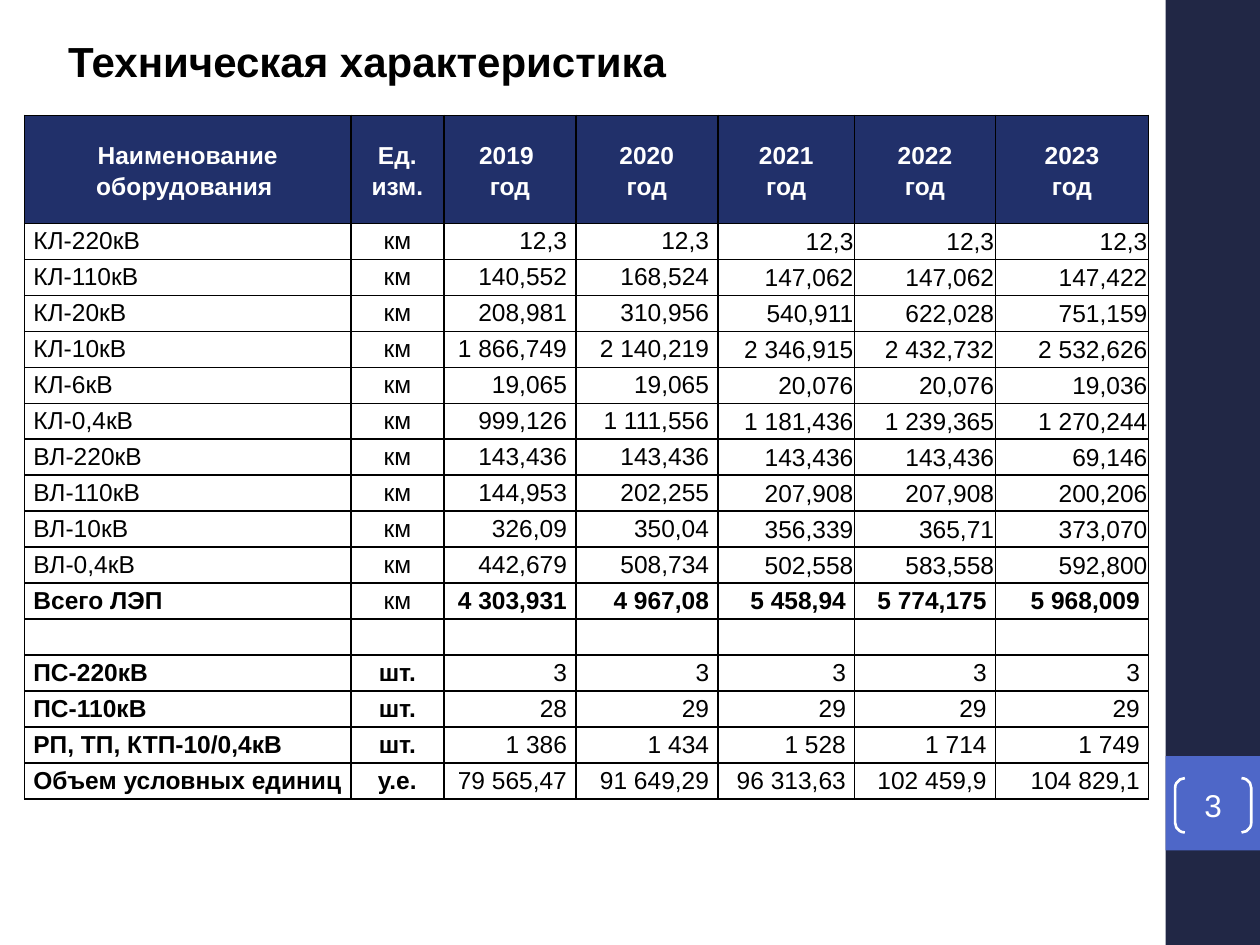
"""Build the slide with the table of technical characteristics."""
import lxml.etree
import pptx
import pptx.dml.color
import pptx.enum.shapes
import pptx.enum.text
import pptx.oxml.ns
import pptx.util

Pt = pptx.util.Pt
qn = pptx.oxml.ns.qn
SHAPE = pptx.enum.shapes.MSO_SHAPE
ALIGN = pptx.enum.text.PP_ALIGN
ANCHOR = pptx.enum.text.MSO_ANCHOR

THEME = {
    "font": "Arial", "ink": "000000", "paper": "FFFFFF", "head": "21306A",
    "band": "212745", "badge": "4E67C8",
    "title": 24, "page": 18, "cell": 14, "lead": 1.15, "rule": 1,
}
TITLE = "Техническая характеристика"
PAGE = "3"
HEAD = ["Наименование оборудования ", "Ед.\nизм.", "2019 \nгод", "2020\nгод",
        "2021\nгод", "2022\nгод", "2023\nгод"]
LINES = [
    ("КЛ-220кВ", "км", "12,3", "12,3", "12,3", "12,3", "12,3"),
    ("КЛ-110кВ", "км", "140,552", "168,524", "147,062", "147,062", "147,422"),
    ("КЛ-20кВ", "км", "208,981", "310,956", "540,911", "622,028", "751,159"),
    ("КЛ-10кВ", "км", "1 866,749", "2 140,219", "2 346,915", "2 432,732", "2 532,626"),
    ("КЛ-6кВ", "км", "19,065", "19,065", "20,076", "20,076", "19,036"),
    ("КЛ-0,4кВ", "км", "999,126", "1 111,556", "1 181,436", "1 239,365", "1 270,244"),
    ("ВЛ-220кВ", "км", "143,436", "143,436", "143,436", "143,436", "69,146"),
    ("ВЛ-110кВ", "км", "144,953", "202,255", "207,908", "207,908", "200,206"),
    ("ВЛ-10кВ", "км", "326,09", "350,04", "356,339", "365,71", "373,070"),
    ("ВЛ-0,4кВ", "км", "442,679", "508,734", "502,558", "583,558", "592,800"),
]
TOTAL = ("Всего ЛЭП", "км", "4 303,931", "4 967,08", "5 458,94", "5 774,175", "5 968,009")
BLANK = ("",) * len(HEAD)
UNITS = [
    ("ПС-220кВ", "шт.", "3", "3", "3", "3", "3"),
    ("ПС-110кВ", "шт.", "28", "29", "29", "29", "29"),
    ("РП, ТП, КТП-10/0,4кВ", "шт.", "1 386", "1 434", "1 528", "1 714", "1 749"),
    ("Объем условных единиц", "у.е.", "79 565,47", "91 649,29", "96 313,63",
     "102 459,9", "104 829,1"),
]
ROWS = [HEAD, *LINES, TOTAL, BLANK, *UNITS]
WIDTHS = [186.4, 53.2, 75.4, 81.2, 78.2, 80.4, 87.6]
HEIGHTS = [61.7] + [20.57] * (len(ROWS) - 1)
ALIGNS = [ALIGN.LEFT, ALIGN.CENTER] + [ALIGN.RIGHT] * 5
WIDE = (5, 0, 5, 0)
TIGHT = (0.7, 0.7, 0.7, 0)


def tint(name):
    return pptx.dml.color.RGBColor.from_string(THEME[name])


def write(host, text, size="cell", color="ink", bold=False, align=ALIGN.LEFT,
          anchor=ANCHOR.MIDDLE, inset=WIDE, lead=1.0):
    host.margin_left, host.margin_top, host.margin_right, host.margin_bottom = map(Pt, inset)
    host.vertical_anchor = anchor
    host.word_wrap = True
    frame = getattr(host, "text_frame", host)
    for i, line in enumerate(text.split("\n")):
        para = frame.paragraphs[0] if i == 0 else frame.add_paragraph()
        para.alignment, para.line_spacing = align, lead
        para.space_before = para.space_after = Pt(0)
        if not line:
            para._p.get_or_add_endParaRPr().set("sz", str(THEME[size] * 100))
            continue
        run = para.add_run()
        run.text = line
        run.font.name, run.font.size = THEME["font"], Pt(THEME[size])
        run.font.bold, run.font.color.rgb = bold, tint(color)


def paint(item, name):
    item.fill.solid()
    item.fill.fore_color.rgb = tint(name)


def plate(slide, kind, box, fill=None):
    shape = slide.shapes.add_shape(kind, *map(Pt, box))
    shape.shadow.inherit = False
    if fill:
        paint(shape, fill)
        shape.line.fill.background()
    else:
        shape.fill.background()
    return shape


def border(cell):
    props = cell._tc.get_or_add_tcPr()
    for i, side in enumerate(("lnL", "lnR", "lnT", "lnB")):
        line = lxml.etree.Element(qn("a:" + side), w=str(Pt(THEME["rule"])))
        fill = lxml.etree.SubElement(line, qn("a:solidFill"))
        lxml.etree.SubElement(fill, qn("a:srgbClr"), val=THEME["ink"])
        props.insert(i, line)


def style(row, col):
    if row == 0:
        return {"color": "paper", "bold": True, "align": ALIGN.CENTER, "lead": THEME["lead"]}
    if row <= len(LINES) and col >= 4:
        return {"align": ALIGNS[col], "inset": TIGHT}
    total = ROWS[row] is TOTAL
    bold = total and col != 1 or ROWS[row] in UNITS and col < 2
    return {"bold": bold, "align": ALIGNS[col], "anchor": ANCHOR.TOP, "lead": THEME["lead"]}


def grid(slide):
    shape = slide.shapes.add_table(len(ROWS), len(HEAD), Pt(14.1), Pt(66),
                                   Pt(sum(WIDTHS)), Pt(sum(HEIGHTS)))
    table = shape.table
    table.first_row = table.horz_banding = False
    for col, width in zip(table.columns, WIDTHS):
        col.width = Pt(width)
    for r, texts in enumerate(ROWS):
        table.rows[r].height = Pt(HEIGHTS[r])
        for c, text in enumerate(texts):
            cell = table.cell(r, c)
            if r == 0:
                paint(cell, "head")
            else:
                cell.fill.background()
            border(cell)
            write(cell, text, **style(r, c))


def main():
    deck = pptx.Presentation()
    deck.slide_width, deck.slide_height = Pt(720), Pt(540)
    slide = deck.slides.add_slide(deck.slide_layouts[5])
    title = slide.shapes.title
    title.left, title.top, title.width, title.height = map(Pt, (31.7, 15.1, 625, 38.9))
    paint(title, "paper")
    write(title.text_frame, TITLE, size="title", bold=True, inset=(7.2, 3.6, 7.2, 3.6))
    plate(slide, SHAPE.RECTANGLE, (666, 0, 54, 540), "band")
    plate(slide, SHAPE.RECTANGLE, (666, 432, 54, 54), "badge")
    page = plate(slide, SHAPE.DOUBLE_BRACKET, (671.5, 444.7, 43.5, 31))
    page.adjustments[0] = 0.18
    page.line.color.rgb, page.line.width = tint("paper"), Pt(1.5)
    write(page.text_frame, PAGE, size="page", color="paper", align=ALIGN.CENTER,
          inset=(0, 0, 0, 0))
    grid(slide)
    deck.save("out.pptx")


if __name__ == "__main__":
    main()
